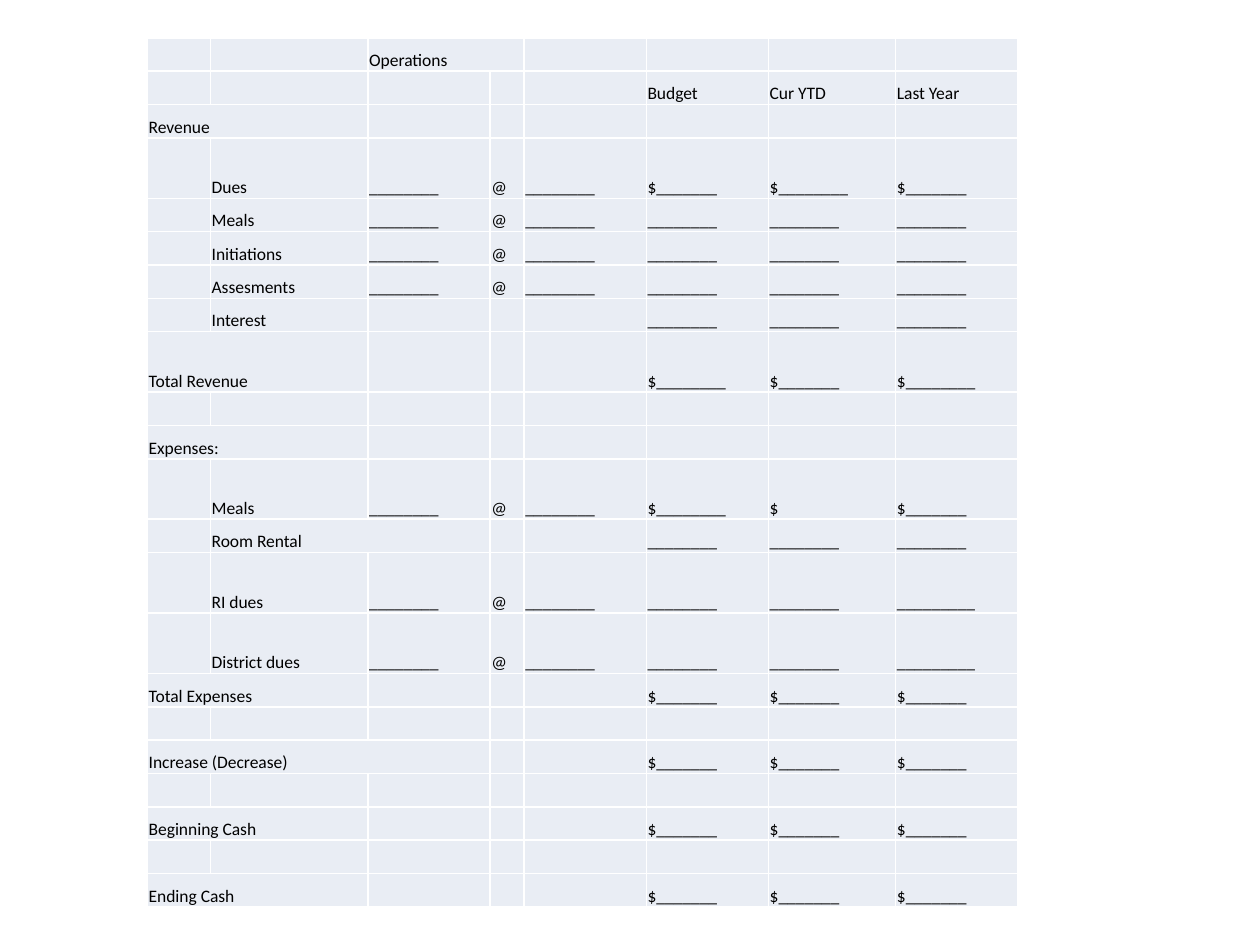
from dataclasses import dataclass

from lxml.etree import SubElement
from pptx import Presentation
from pptx.dml.color import RGBColor
from pptx.enum.text import MSO_VERTICAL_ANCHOR as Anchor
from pptx.oxml.ns import qn
from pptx.table import Table, _Cell as Cell
from pptx.util import Inches, Pt

COLORS = {"cell": "E9EDF4", "border": "FFFFFF", "text": "000000"}
FONT_NAME = "Calibri"
FONT_SIZE = Pt(10)
BORDER_WIDTH = Pt(1)
COLUMN_WIDTHS = [0.5, 1.25, 0.97, 0.27, 0.97, 0.97, 1.01, 0.97]
TABLE_HEIGHT = 6.9
TALL_HEIGHT = 0.48
FIRST_AMOUNT_COLUMN = 5

BLANK = "_" * 8
LONG_BLANK = "_" * 9
DOLLARS = "$" + "_" * 7
LONG_DOLLARS = "$" + "_" * 8
BLANKS = (BLANK,) * 3
TOTALS = (DOLLARS,) * 3


@dataclass(frozen=True)
class BudgetRow:
    label: str = ""
    column: int = 0
    span: int = 1
    amounts: tuple[str, ...] = ()
    has_rate: bool = False
    tall: bool = False


def heading(label: str, amounts: tuple[str, ...] = (), span: int = 2, tall: bool = False) -> BudgetRow:
    return BudgetRow(label, 0, span, amounts, tall=tall)


def item(label: str, amounts: tuple[str, ...] = BLANKS, has_rate: bool = True, tall: bool = False) -> BudgetRow:
    return BudgetRow(label, 1, 1, amounts, has_rate, tall)


ROWS = [
    BudgetRow("Operations", 2, 2),
    BudgetRow(amounts=("Budget", "Cur YTD", "Last Year")),
    heading("Revenue"),
    item("Dues", (DOLLARS, LONG_DOLLARS, DOLLARS), tall=True),
    item("Meals"),
    item("Initiations"),
    item("Assesments"),
    item("Interest", has_rate=False),
    heading("Total Revenue", (LONG_DOLLARS, DOLLARS, LONG_DOLLARS), tall=True),
    BudgetRow(),
    heading("Expenses:"),
    item("Meals", (LONG_DOLLARS, "$", DOLLARS), tall=True),
    BudgetRow("Room Rental", 1, 2, BLANKS),
    item("RI dues", (BLANK, BLANK, LONG_BLANK), tall=True),
    item("District dues", (BLANK, BLANK, LONG_BLANK), tall=True),
    heading("Total Expenses", TOTALS),
    BudgetRow(),
    heading("Increase (Decrease)", TOTALS, span=3),
    BudgetRow(),
    heading("Beginning Cash", TOTALS),
    BudgetRow(),
    heading("Ending Cash", TOTALS),
]


def add_borders(cell: Cell) -> None:
    properties = cell._tc.get_or_add_tcPr()
    for side in ("a:lnL", "a:lnR", "a:lnT", "a:lnB"):
        line = SubElement(properties, qn(side), w=str(BORDER_WIDTH))
        fill = SubElement(line, qn("a:solidFill"))
        SubElement(fill, qn("a:srgbClr"), val=COLORS["border"])


def format_cell(cell: Cell) -> None:
    add_borders(cell)
    cell.fill.solid()
    cell.fill.fore_color.rgb = RGBColor.from_string(COLORS["cell"])
    cell.vertical_anchor = Anchor.BOTTOM
    cell.margin_left = cell.margin_right = cell.margin_top = Inches(0.01)
    cell.margin_bottom = 0
    paragraph = cell.text_frame.paragraphs[0]
    for run in paragraph.runs:
        run.font.name = FONT_NAME
        run.font.size = FONT_SIZE
        run.font.color.rgb = RGBColor.from_string(COLORS["text"])
    if not paragraph.runs:
        SubElement(paragraph._p, qn("a:endParaRPr"), sz=str(int(FONT_SIZE.pt * 100)))


def fill_row(table: Table, index: int, row: BudgetRow) -> None:
    texts = {row.column: row.label}
    if row.has_rate:
        texts.update({2: BLANK, 3: "@", 4: BLANK})
    texts.update(enumerate(row.amounts, FIRST_AMOUNT_COLUMN))
    for column in range(len(COLUMN_WIDTHS)):
        cell = table.cell(index, column)
        if texts.get(column):
            cell.text_frame.text = texts[column]
        format_cell(cell)
    if row.span > 1:
        table.cell(index, row.column).merge(table.cell(index, row.column + row.span - 1))


def main() -> None:
    presentation = Presentation()
    presentation.slide_width = Inches(10)
    presentation.slide_height = Inches(7.5)
    slide = presentation.slides.add_slide(presentation.slide_layouts[6])
    table = slide.shapes.add_table(
        len(ROWS), len(COLUMN_WIDTHS),
        Inches(1.17), Inches(0.3), Inches(sum(COLUMN_WIDTHS)), Inches(TABLE_HEIGHT),
    ).table
    table.first_row = False
    table.horz_banding = False
    for column, width in zip(table.columns, COLUMN_WIDTHS):
        column.width = Inches(width)
    tall_count = sum(row.tall for row in ROWS)
    short_height = (TABLE_HEIGHT - tall_count * TALL_HEIGHT) / (len(ROWS) - tall_count)
    for index, row in enumerate(ROWS):
        table.rows[index].height = Inches(TALL_HEIGHT if row.tall else short_height)
        fill_row(table, index, row)
    presentation.save("out.pptx")


if __name__ == "__main__":
    main()
